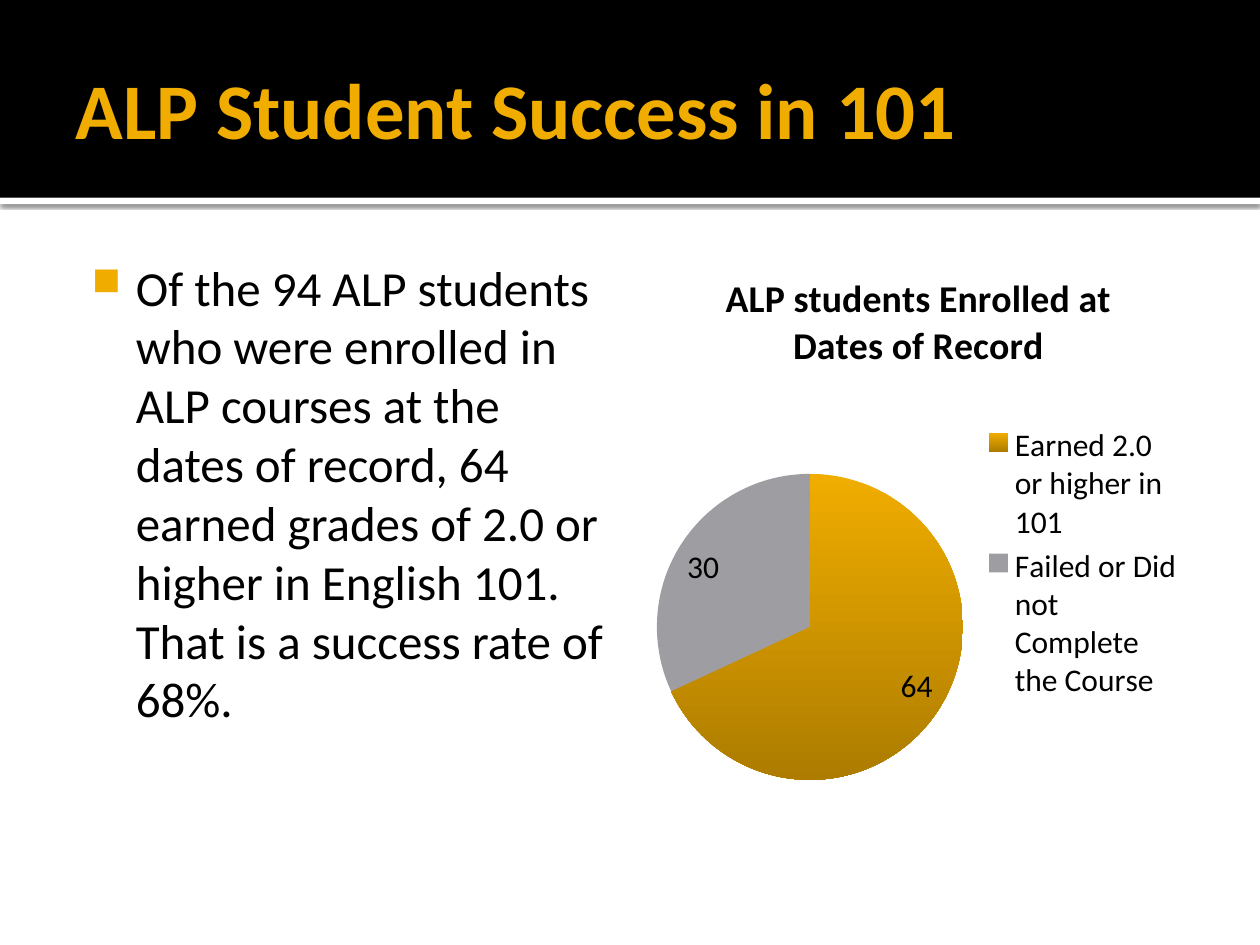
from lxml import etree
from pptx import Presentation
from pptx import util as u
from pptx.chart.data import CategoryChartData
from pptx.dml.color import RGBColor
from pptx.enum import chart as charts, shapes, text
from pptx.oxml import parse_xml
from pptx.oxml.ns import nsdecls

TITLE = "ALP Student Success in 101"
BODY = ("Of the 94 ALP students who were enrolled in ALP courses at the dates of record, "
        "64 earned grades of 2.0 or higher in English 101. That is a success rate of 68%.")
CHART_TITLE = "ALP students Enrolled at Dates of Record"
OUTCOMES = {"Earned 2.0 or higher in 101": 64, "Failed or Did not Complete the Course": 30}

THEME = {
    "font": "Calibri", "gold": "F0AD00", "dark_gold": "AD7C00", "grey": "9D9DA2",
    "black": "000000", "white": "FFFFFF",
    "title": 45, "body": 28, "chart_title": 21.6, "chart": 18,
}
MARGIN, COLUMN_TOP, COLUMN_WIDTH, COLUMN_HEIGHT = 0.5, 1.94, 4.42, 5.06
SLIDE_WIDTH, SLIDE_HEIGHT = 10, 7.5
BAND_HEIGHT = 1.57
PIE_LAYOUT = {"x": 0.03, "y": 0.36, "w": 0.55, "h": 0.48}


def color(name):
    return RGBColor.from_string(THEME[name])


def style(font, size, name="black", bold=False):
    font.name, font.size, font.bold = THEME["font"], u.Pt(THEME[size]), bold
    font.color.rgb = color(name)


def place(shape, left, top, width, height):
    shape.left, shape.top = u.Inches(left), u.Inches(top)
    shape.width, shape.height = u.Inches(width), u.Inches(height)


def set_insets(frame, left, top, right, bottom):
    frame.margin_left, frame.margin_top = u.Inches(left), u.Inches(top)
    frame.margin_right, frame.margin_bottom = u.Inches(right), u.Inches(bottom)
    frame.word_wrap = True
    frame.auto_size = text.MSO_AUTO_SIZE.NONE


def add_band(page, top, height, fill):
    band = page.shapes.add_shape(shapes.MSO_SHAPE.RECTANGLE, 0, u.Inches(top),
                                 u.Inches(SLIDE_WIDTH), u.Inches(height))
    band.shadow.inherit = False
    band.fill.solid()
    band.fill.fore_color.rgb = color(fill)
    band.line.fill.background()
    return band


def add_header(page):
    strip = add_band(page, BAND_HEIGHT, 0.05, "white")
    effects = strip.element.spPr.find("{*}effectLst")
    effects.append(parse_xml(
        f'<a:outerShdw {nsdecls("a")} blurRad="{u.Pt(2.5)}" dist="{u.Pt(0.8)}" '
        f'dir="5400000" algn="tl" rotWithShape="0"><a:srgbClr val="{THEME["black"]}">'
        '<a:alpha val="60000"/></a:srgbClr></a:outerShdw>'))
    band = add_band(page, 0, BAND_HEIGHT, "black")
    title = page.shapes.title
    band.element.addnext(title.element)
    place(title, MARGIN, 0.17, SLIDE_WIDTH - 2 * MARGIN, 1.37)
    frame = title.text_frame
    frame.text = TITLE
    set_insets(frame, 0.1, 0.05, 0.05, 0.05)
    frame.vertical_anchor = text.MSO_ANCHOR.MIDDLE
    para = frame.paragraphs[0]
    para.alignment = text.PP_ALIGN.LEFT
    para.line_spacing = 1.0
    style(para.runs[0].font, "title", "gold", True)


def add_body(page):
    box = page.shapes.add_textbox(0, 0, 0, 0)
    place(box, MARGIN, COLUMN_TOP, COLUMN_WIDTH, COLUMN_HEIGHT)
    frame = box.text_frame
    frame.text = BODY
    set_insets(frame, 0.1, 0.1, 0.1, 0.05)
    para = frame.paragraphs[0]
    style(para.runs[0].font, "body")
    props = para._p.get_or_add_pPr()
    props.set("marL", str(u.Inches(0.48)))
    props.set("indent", str(u.Inches(-0.35)))
    for bullet in (f'<a:buClr {nsdecls("a")}><a:srgbClr val="{THEME["gold"]}"/></a:buClr>',
                   f'<a:buSzPct {nsdecls("a")} val="80000"/>',
                   f'<a:buChar {nsdecls("a")} char="■"/>'):
        props.append(parse_xml(bullet))


def add_pie(page):
    data = CategoryChartData()
    data.categories = list(OUTCOMES)
    data.add_series("Series 1", list(OUTCOMES.values()))
    left = SLIDE_WIDTH - MARGIN - COLUMN_WIDTH
    area = [u.Inches(n) for n in (left, COLUMN_TOP, COLUMN_WIDTH, COLUMN_HEIGHT)]
    chart = page.shapes.add_chart(charts.XL_CHART_TYPE.PIE, *area, data).chart
    style(chart.font, "chart")
    chart.has_title = True
    heading = chart.chart_title.text_frame
    heading.text = CHART_TITLE
    style(heading.paragraphs[0].runs[0].font, "chart_title", bold=True)
    chart.chart_title.include_in_layout = False
    chart.has_legend = True
    chart.legend.position = charts.XL_LEGEND_POSITION.RIGHT
    chart.legend.include_in_layout = False
    style(chart.legend.font, "chart")

    plot = chart.plots[0]
    plot.vary_by_categories = True
    plot.has_data_labels = True
    labels = plot.data_labels
    labels.show_value, labels.show_percentage = True, False
    labels.position = charts.XL_LABEL_POSITION.INSIDE_END
    style(labels.font, "chart")

    earned, failed = [plot.series[0].points[i].format.fill for i in range(len(OUTCOMES))]
    earned.gradient()
    earned.gradient_angle = 270
    for stop, name in zip(earned.gradient_stops, ("gold", "dark_gold")):
        stop.color.rgb = color(name)
    failed.solid()
    failed.fore_color.rgb = color("grey")

    plot_area = chart.element.chart.plotArea
    for old in plot_area.findall("{*}layout"):
        plot_area.remove(old)
    layout = parse_xml(f'<c:layout {nsdecls("c")}><c:manualLayout/></c:layout>')
    settings = {"layoutTarget": "inner", "xMode": "edge", "yMode": "edge", **PIE_LAYOUT}
    for tag, value in settings.items():
        namespace = etree.QName(layout).namespace
        etree.SubElement(layout[0], f"{{{namespace}}}{tag}").set("val", str(value))
    plot_area.insert(0, layout)


def main():
    deck = Presentation()
    deck.slide_width, deck.slide_height = u.Inches(SLIDE_WIDTH), u.Inches(SLIDE_HEIGHT)
    page = deck.slides.add_slide(deck.slide_layouts[5])
    page.background.fill.solid()
    page.background.fill.fore_color.rgb = color("white")
    add_header(page)
    add_body(page)
    add_pie(page)
    deck.save("out.pptx")


if __name__ == "__main__":
    main()
